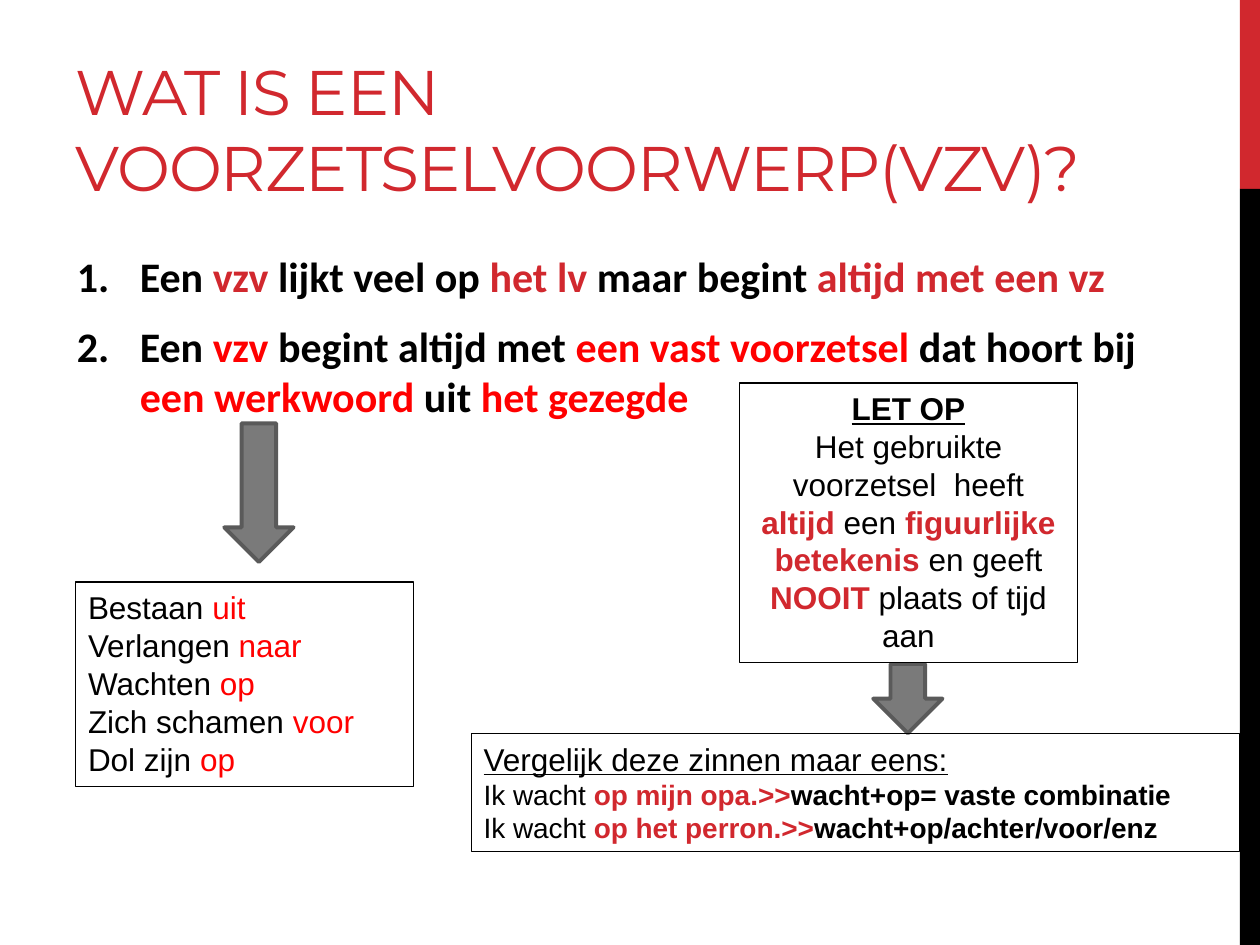
from lxml.etree import SubElement
from pptx import Presentation
from pptx.dml.color import RGBColor
from pptx.enum.shapes import MSO_SHAPE
from pptx.enum.text import MSO_ANCHOR, MSO_AUTO_SIZE, PP_ALIGN
from pptx.oxml.ns import qn
from pptx.util import Inches, Pt

WIDTH, HEIGHT = Inches(10), Inches(7.5)
CRIMSON, RED, BLACK = "D1282E", "FF0000", "000000"
GREY, DARK_GREY = "7A7A7A", "5A5A5A"

PLAIN = {"color": BLACK, "bold": False}
BOLD = {"color": BLACK, "bold": True}
ACCENT = {"color": CRIMSON, "bold": True}
BRIGHT = {"color": RED, "bold": True}
PREPOSITION = {"color": RED, "bold": False}
SMALL = {"size": Pt(16)}

RULES = [
    [("Een ", BOLD), ("vzv", ACCENT), (" lijkt veel op ", BOLD), ("het lv ", ACCENT),
     ("maar begint ", BOLD), ("altijd met een vz", ACCENT)],
    [("Een ", BOLD), ("vzv", BRIGHT), (" begint altijd met ", BOLD),
     ("een vast voorzetsel ", BRIGHT), ("dat hoort bij ", BOLD),
     ("een werkwoord ", BRIGHT), ("uit ", BOLD), ("het gezegde", BRIGHT)],
]
COMBINATIONS = [("Bestaan", "uit"), ("Verlangen", "naar"), ("Wachten", "op"),
                ("Zich schamen", "voor"), ("Dol zijn", "op")]
WARNING = [
    [("LET OP", BOLD | {"underline": True})],
    [("Het gebruikte voorzetsel  heeft ", PLAIN), ("altijd", ACCENT), (" een ", PLAIN),
     ("figuurlijke betekenis ", ACCENT), ("en geeft ", PLAIN), ("NOOIT ", ACCENT),
     ("plaats of tijd aan", PLAIN)],
]
COMPARISONS = [("op mijn opa.>>", "wacht+op= vaste combinatie"),
               ("op het perron.>>", "wacht+op/achter/voor/enz")]


def rgb(code):
    """Turn a hex string into a colour."""
    return RGBColor.from_string(code)


def area(left, top, width, height):
    """Turn percentages of the slide's size into lengths."""
    return (round(WIDTH * left / 100), round(HEIGHT * top / 100),
            round(WIDTH * width / 100), round(HEIGHT * height / 100))


def set_attributes(target, values):
    """Set each named attribute on the target."""
    for name, value in values.items():
        setattr(target, name, value)


def move(placeholder, bounds):
    """Put a placeholder at the given percentages."""
    set_attributes(placeholder, dict(zip(("left", "top", "width", "height"), area(*bounds))))


def write(frame, paragraphs, base, align=PP_ALIGN.LEFT):
    """Fill a text frame with paragraphs of formatted runs."""
    for index, pieces in enumerate(paragraphs):
        paragraph = frame.add_paragraph() if index else frame.paragraphs[0]
        paragraph.alignment = align
        for text, style in pieces:
            run = paragraph.add_run()
            run.text = text
            values = base | style
            run.font.color.rgb = rgb(values.pop("color"))
            set_attributes(run.font, values)


def add_title(slide, text):
    """Write the slide title."""
    title = slide.shapes.title
    move(title, (5, 2.27, 90.7, 20))
    set_attributes(title.text_frame, {"vertical_anchor": MSO_ANCHOR.BOTTOM, "word_wrap": True,
                                      "auto_size": MSO_AUTO_SIZE.NONE})
    write(title.text_frame, [[(text, {"color": CRIMSON})]],
          {"name": "Montserrat", "size": Pt(36)})
    title.text_frame.paragraphs[0].runs[0].font._element.set("spc", "-60")


def add_rules(slide, rules):
    """Write the numbered rules in the body placeholder."""
    body = slide.placeholders[1]
    move(body, (5.1, 25.87, 91.3, 74.13))
    body.text_frame.auto_size = MSO_AUTO_SIZE.NONE
    write(body.text_frame, rules, {"name": "Calibri", "size": Pt(24)})
    for paragraph in body.text_frame.paragraphs:
        set_attributes(paragraph, {"space_before": Pt(4.8), "space_after": Pt(6)})
        properties = paragraph._p.get_or_add_pPr()
        properties.set("marL", str(Inches(0.5)))
        properties.set("indent", str(-Inches(0.5)))
        SubElement(properties, qn("a:buFont"), typeface="+mj-lt")
        SubElement(properties, qn("a:buAutoNum"), type="arabicPeriod")


def add_block(slide, kind, bounds, fill, outline=None):
    """Add a filled preset shape, outlined if a colour is given."""
    block = slide.shapes.add_shape(kind, *area(*bounds))
    block.shadow.inherit = False
    block.fill.solid()
    block.fill.fore_color.rgb = rgb(fill)
    if outline:
        block.line.color.rgb = rgb(outline)
        block.line.width = Pt(2.25)
    else:
        block.line.fill.background()


def add_note(slide, bounds, paragraphs, align=PP_ALIGN.LEFT):
    """Add a thinly framed text box."""
    note = slide.shapes.add_textbox(*area(*bounds))
    note.line.color.rgb = rgb(BLACK)
    note.line.width = Pt(0.75)
    set_attributes(note.text_frame, {"word_wrap": True,
                                     "auto_size": MSO_AUTO_SIZE.SHAPE_TO_FIT_TEXT})
    write(note.text_frame, paragraphs, {"name": "Arial", "size": Pt(18)}, align)


def main():
    """Build and save the slide."""
    deck = Presentation()
    set_attributes(deck, {"slide_width": WIDTH, "slide_height": HEIGHT})
    slide = deck.slides.add_slide(deck.slide_layouts[1])

    for top, height, colour in ((0, 20, CRIMSON), (20, 80, BLACK)):
        add_block(slide, MSO_SHAPE.RECTANGLE, (98.4, top, 1.6, height), colour)
    add_title(slide, "WAT IS EEN VOORZETSELVOORWERP(VZV)?")
    add_rules(slide, RULES)

    for bounds in ((17.8, 44.8, 5.5, 14.67), (69.3, 70.27, 5.5, 7.33)):
        add_block(slide, MSO_SHAPE.DOWN_ARROW, bounds, GREY, DARK_GREY)

    add_note(slide, (6, 61.6, 26.8, 21.6),
             [[(f"{verb} ", PLAIN), (preposition, PREPOSITION)]
              for verb, preposition in COMBINATIONS])
    add_note(slide, (58.7, 40.53, 26.8, 29.6), WARNING, PP_ALIGN.CENTER)
    heading = [("Vergelijk deze zinnen maar eens:", PLAIN | {"underline": True})]
    add_note(slide, (37.4, 77.6, 61, 12.53),
             [heading] + [[("Ik wacht ", PLAIN | SMALL), (phrase, ACCENT | SMALL),
                           (verdict, BOLD | SMALL)] for phrase, verdict in COMPARISONS])
    deck.save("out.pptx")


if __name__ == "__main__":
    main()
